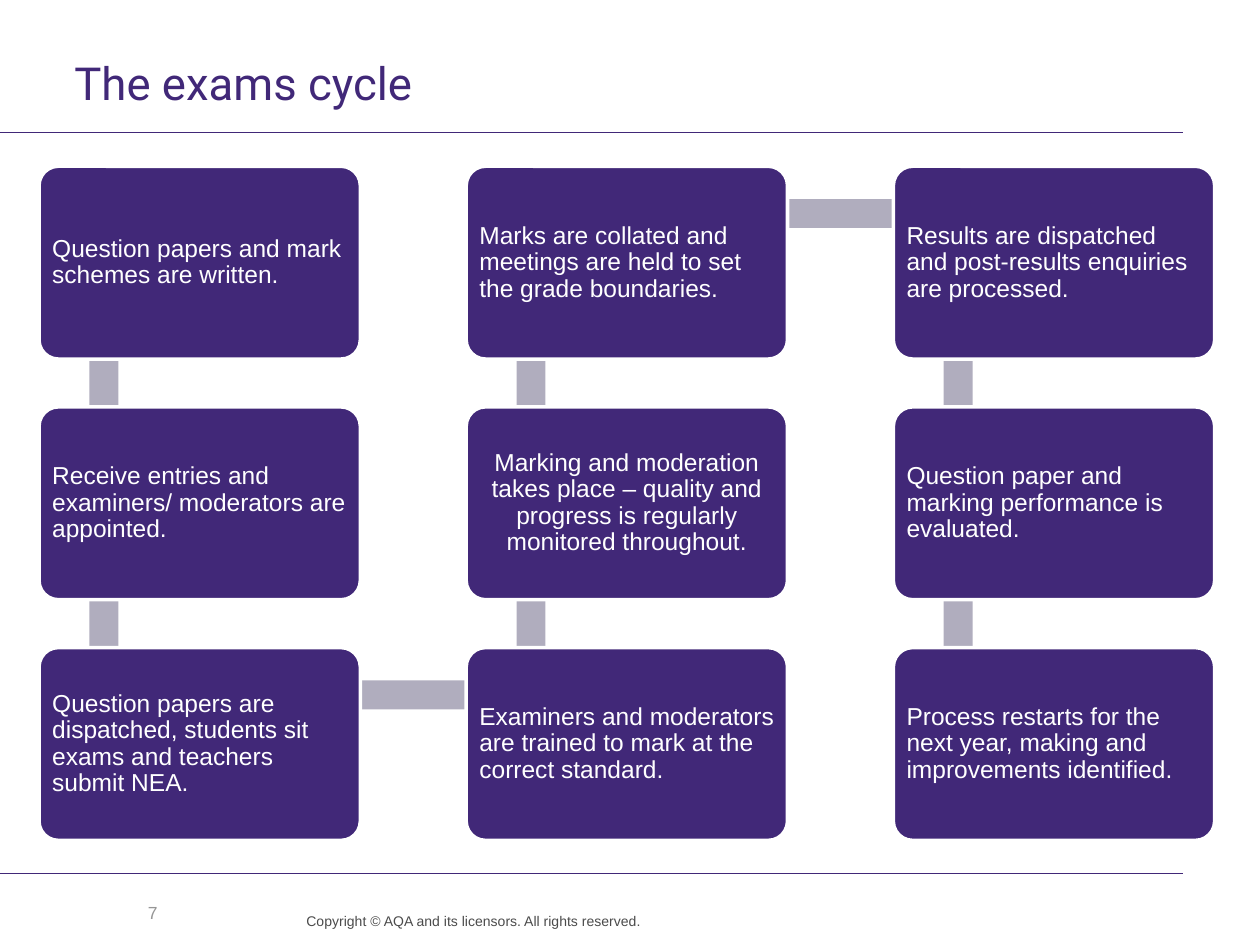
"""Build the exams cycle slide: nine linked steps that snake through three columns."""
import pptx
import pptx.dml.color
import pptx.enum.shapes
import pptx.enum.text
import pptx.util
import lxml.etree
from pptx.util import Inches

COLOURS = {"purple": "412878", "link": "B0ADBE", "white": "FFFFFF",
           "number": "969696", "copyright": "4B4B4B"}
RGB = {name: pptx.dml.color.RGBColor.from_string(value) for name, value in COLOURS.items()}
ALIGN = pptx.enum.text.PP_ALIGN
ANCHOR = pptx.enum.text.MSO_ANCHOR
SHAPE = pptx.enum.shapes.MSO_SHAPE


def write_text(shape, text, size, colour, font="Arial", align=ALIGN.LEFT,
               anchor=ANCHOR.TOP, insets=(0, 0, 0, 0), spacing=None):
    frame = shape.text_frame
    frame.text = text
    frame.word_wrap = True
    frame.auto_size = pptx.enum.text.MSO_AUTO_SIZE.NONE
    frame.vertical_anchor = anchor
    frame.margin_left, frame.margin_top, frame.margin_right, frame.margin_bottom = map(Inches, insets)
    paragraph = frame.paragraphs[0]
    paragraph.alignment = align
    paragraph.line_spacing = spacing
    paragraph.font.name = font
    paragraph.font.size = pptx.util.Pt(size)
    paragraph.font.color.rgb = RGB[colour]


def add_block(kind, left, top, width, height, fill):
    shape = slide.shapes.add_shape(kind, Inches(left), Inches(top), Inches(width), Inches(height))
    shape.shadow.inherit = False
    shape.fill.solid()
    shape.fill.fore_color.rgb = RGB[fill]
    shape.line.fill.background()
    return shape


presentation = pptx.Presentation()
presentation.slide_width = Inches(10)
presentation.slide_height = Inches(7.5)
slide = presentation.slides.add_slide(presentation.slide_layouts[5])

for rule_top in (1.05, 6.93):
    rule = slide.shapes.add_connector(pptx.enum.shapes.MSO_CONNECTOR.STRAIGHT,
                                      0, Inches(rule_top), Inches(9.39), Inches(rule_top))
    rule.line.color.rgb = RGB["purple"]
    rule.line.width = pptx.util.Pt(0.6)
    lxml.etree.SubElement(rule._element.spPr, pptx.oxml.ns.qn("a:effectLst"))

title = slide.shapes.title
title.left, title.top, title.width, title.height = map(Inches, (0.59, 0.48, 8.8, 0.47))
write_text(title, "The exams cycle", size=26, colour="purple", font="Roboto",
           insets=(0, 0, 0.1, 0), spacing=pptx.util.Pt(28))

steps = [
    (0, 0, "Question papers and mark schemes are written."),
    (0, 1, "Receive entries and examiners/ moderators are appointed."),
    (0, 2, "Question papers are dispatched, students sit exams and teachers submit NEA."),
    (1, 2, "Examiners and moderators are trained to mark at the correct standard."),
    (1, 1, "Marking and moderation takes place – quality and progress is regularly monitored throughout."),
    (1, 0, "Marks are collated and meetings are held to set the grade boundaries."),
    (2, 0, "Results are dispatched and post-results enquiries are processed."),
    (2, 1, "Question paper and marking performance is evaluated."),
    (2, 2, "Process restarts for the next year, making and improvements identified."),
]
first_left, first_top = 0.31, 1.32
column_step, row_step = 3.39, 1.91
box_width, box_height = 2.55, 1.53
link_thickness = 0.23

for (column, row, _), (next_column, next_row, _) in zip(steps, steps[1:]):
    left = first_left + column * column_step
    top = first_top + min(row, next_row) * row_step
    if column == next_column:
        add_block(SHAPE.RECTANGLE, left + 0.4, top + 0.37, link_thickness, 1.9, "link")
    else:
        add_block(SHAPE.RECTANGLE, left + 0.52, top + 0.26, 3.38, link_thickness, "link")

for column, row, text in steps:
    box = add_block(SHAPE.ROUNDED_RECTANGLE, first_left + column * column_step,
                    first_top + row * row_step, box_width, box_height, "purple")
    box.adjustments[0] = 0.1
    box.line.color.rgb = RGB["white"]
    box.line.width = pptx.util.Pt(2)
    write_text(box, text, size=14, colour="white", anchor=ANCHOR.MIDDLE, insets=(0.06,) * 4,
               align=ALIGN.CENTER if (column, row) == (1, 1) else ALIGN.LEFT, spacing=0.9)

slide_number = slide.shapes.add_textbox(Inches(0.59), Inches(7.04), Inches(0.76), Inches(0.4))
write_text(slide_number, "7", size=10, colour="number", align=ALIGN.RIGHT,
           anchor=ANCHOR.MIDDLE, insets=(0.1, 0.05, 0.1, 0.05))

copyright_line = slide.shapes.add_textbox(Inches(2.16), Inches(7.24), Inches(2.93), Inches(0.26))
write_text(copyright_line, "Copyright © AQA and its licensors. All rights reserved.", size=8,
           colour="copyright", align=ALIGN.RIGHT, spacing=pptx.util.Pt(10))

presentation.save("out.pptx")
